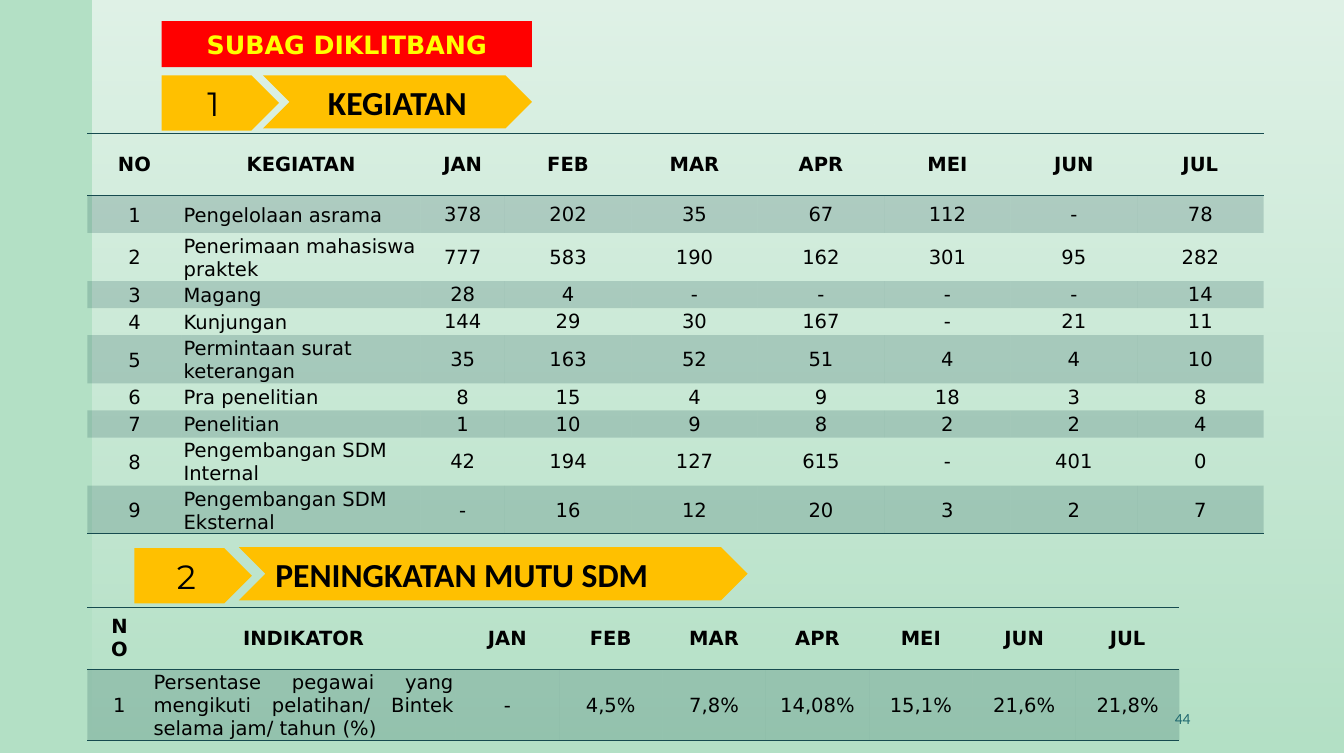
"""Build the SUBAG DIKLITBANG slide with its activity and staff quality tables."""
from lxml import etree
from pptx import Presentation
from pptx.dml.color import RGBColor
from pptx.enum.shapes import MSO_SHAPE as SHAPE
from pptx.enum.text import MSO_ANCHOR as ANCHOR, MSO_AUTO_SIZE as AUTO_SIZE, PP_ALIGN as ALIGN
from pptx.oxml.ns import qn
from pptx.util import Inches, Pt

COLORS = {
    "background": "B3E0C5", "panel": "FFFFFF", "teal": "164B4F", "number": "1F696F",
    "title": "FFFF00", "red": "FF0000", "amber": "FFC000", "text": "000000",
}
RGB = {name: RGBColor.from_string(value) for name, value in COLORS.items()}
MONTHS = ["JAN", "FEB", "MAR", "APR", "MEI", "JUN", "JUL"]
NO_STYLE = "{2D5ABB26-0587-4C30-8999-92F81FD0307C}"


def write(frame, text, size, font, color="text", bold=False, align=ALIGN.CENTER):
    paragraph = frame.paragraphs[0]
    paragraph.alignment = align
    run = paragraph.add_run()
    run.text = text
    run.font.size, run.font.name, run.font.bold = Pt(size), font, bold
    run.font.color.rgb = RGB[color]


def set_alpha(color_element, percent):
    etree.SubElement(color_element, qn("a:alpha")).set("val", str(percent * 1000))


deck = Presentation()
deck.slide_width, deck.slide_height = Inches(13.39), Inches(7.5)
slide = deck.slides.add_slide(deck.slide_layouts[5])
slide.background.fill.solid()
slide.background.fill.fore_color.rgb = RGB["background"]

panel = slide.shapes.add_shape(SHAPE.RECTANGLE, Inches(0.92), 0, Inches(12.47), Inches(7.5))
panel.shadow.inherit = False
panel.line.fill.background()
panel.fill.gradient()
panel.fill.gradient_angle = 270
for stop in panel.fill.gradient_stops:
    stop.color.rgb = RGB["panel"]
for stop_color, opacity in zip(panel.element.spPr.iter(qn("a:srgbClr")), (60, 0)):
    set_alpha(stop_color, opacity)

activities = [
    ["Pengelolaan asrama", "378", "202", "35", "67", "112", "-", "78"],
    ["Penerimaan mahasiswa praktek", "777", "583", "190", "162", "301", "95", "282"],
    ["Magang", "28", "4", "-", "-", "-", "-", "14"],
    ["Kunjungan", "144", "29", "30", "167", "-", "21", "11"],
    ["Permintaan surat keterangan", "35", "163", "52", "51", "4", "4", "10"],
    ["Pra penelitian", "8", "15", "4", "9", "18", "3", "8"],
    ["Penelitian", "1", "10", "9", "8", "2", "2", "4"],
    ["Pengembangan SDM Internal", "42", "194", "127", "615", "-", "401", "0"],
    ["Pengembangan SDM Eksternal", "-", "16", "12", "20", "3", "2", "7"],
]
indicators = [
    ["Persentase pegawai yang mengikuti pelatihan/ Bintek selama jam/ tahun (%)",
     "-", "4,5%", "7,8%", "14,08%", "15,1%", "21,6%", "21,8%"],
]
sections = [
    ("KEGIATAN", activities, 1.33, ALIGN.LEFT, [0.94, 2.38, 0.84] + [1.26] * 6,
     [0.62, 0.37, 0.48, 0.27, 0.27, 0.48, 0.27, 0.27, 0.48, 0.48]),
    ("INDIKATOR", indicators, 6.05, ALIGN.JUSTIFY, [0.64, 3.03] + [1.03] * 7, [0.61, 0.7]),
]
for heading, records, top, label_align, widths, heights in sections:
    rows = [["NO", heading] + MONTHS]
    rows += [[str(number)] + record for number, record in enumerate(records, 1)]
    frame = slide.shapes.add_table(len(rows), len(widths), Inches(0.87), Inches(top),
                                   Inches(sum(widths)), Inches(sum(heights)))
    grid = frame.table
    grid.first_row = grid.horz_banding = False
    next(frame.element.iter(qn("a:tableStyleId"))).text = NO_STYLE
    for column, width in zip(grid.columns, widths):
        column.width = Inches(width)
    for r, (row, height) in enumerate(zip(rows, heights)):
        grid.rows[r].height = Inches(height)
        header = r == 0
        edges = ["a:lnT", "a:lnB"] if header else ["a:lnB"] if r == len(rows) - 1 else []
        for c, text in enumerate(row):
            cell = grid.cell(r, c)
            side = 0.2 if header else 0.02 if c < 2 else 0.01
            cell.margin_left = cell.margin_right = Inches(side)
            cell.margin_top = Inches(0.08 if header else side)
            cell.margin_bottom = Inches(0.08 if header else 0)
            cell.vertical_anchor = ANCHOR.MIDDLE
            align = label_align if c == 1 and not header else ALIGN.CENTER
            write(cell.text_frame, text, 14, "DejaVu Sans", bold=header, align=align)
            properties = cell._tc.get_or_add_tcPr()
            for edge in edges:
                border = etree.SubElement(properties, qn(edge), w=str(Pt(1)))
                ink = etree.SubElement(border, qn("a:solidFill"))
                etree.SubElement(ink, qn("a:srgbClr"), val=COLORS["teal"])
            if r % 2:
                cell.fill.solid()
                cell.fill.fore_color.rgb = RGB["teal"]
                set_alpha(properties.find(qn("a:solidFill"))[0], 20)
            else:
                cell.fill.background()

page_number = slide.shapes.add_textbox(Inches(8.84), Inches(6.95), Inches(3.12), Inches(0.4))
page_number.text_frame.word_wrap = True
page_number.text_frame.vertical_anchor = ANCHOR.MIDDLE
write(page_number.text_frame, "44", 11.1, "Calibri", "number", align=ALIGN.RIGHT)

title = slide.shapes.title
title.left, title.top, title.width, title.height = map(Inches, (1.61, 0.21, 3.69, 0.46))
outline = etree.SubElement(title.element.spPr, qn("a:prstGeom"), prst="roundRect")
etree.SubElement(outline, qn("a:avLst"))
title.fill.solid()
title.fill.fore_color.rgb = RGB["red"]
title.text_frame.auto_size = AUTO_SIZE.NONE
title.text_frame.vertical_anchor = ANCHOR.MIDDLE
write(title.text_frame, "SUBAG DIKLITBANG", 18.1, "DejaVu Sans", "title", bold=True)
slide.shapes.element.append(title.element)

banners = [
    ("1", "KEGIATAN", 1.61, 0.75, 2.62, 0.75, 2.68, ALIGN.CENTER),
    ("2", "PENINGKATAN MUTU SDM", 1.34, 5.46, 2.38, 5.45, 5.07, ALIGN.LEFT),
]
for number, label, number_left, number_top, label_left, label_top, label_width, align in banners:
    banner = slide.shapes.add_group_shape()
    parts = [
        (SHAPE.PENTAGON, number_left, number_top, 1.17, 0.55, number, "Montserrat", ALIGN.CENTER),
        (SHAPE.CHEVRON, label_left, label_top, label_width, 0.53, label, "Calibri", align),
    ]
    for kind, left, top, width, height, text, font, text_align in parts:
        arrow = banner.shapes.add_shape(kind, *map(Inches, (left, top, width, height)))
        arrow.shadow.inherit = False
        arrow.fill.solid()
        arrow.fill.fore_color.rgb = RGB["amber"]
        arrow.line.fill.background()
        arrow.text_frame.vertical_anchor = ANCHOR.MIDDLE
        write(arrow.text_frame, text, 24.1, font, bold=text == label, align=text_align)

deck.save("out.pptx")
